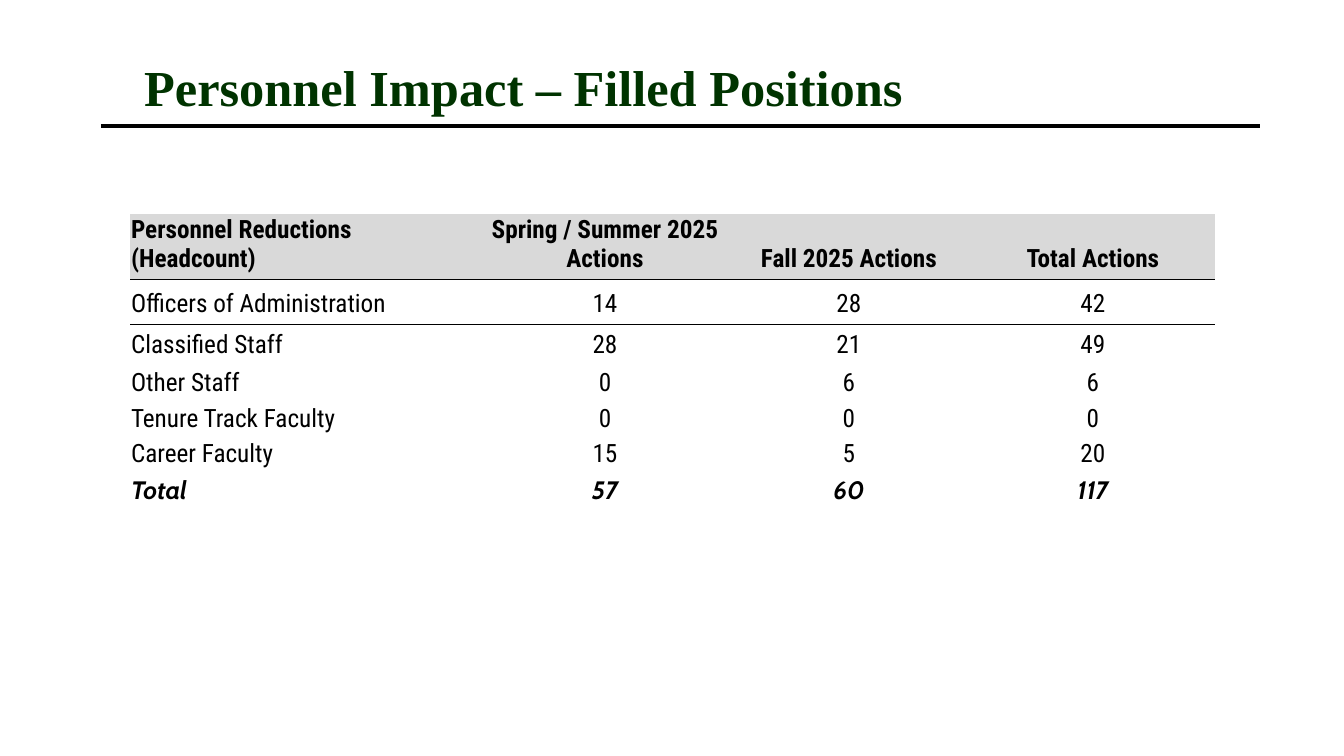
from dataclasses import dataclass

from lxml import etree
from pptx import Presentation
from pptx.dml.color import RGBColor
from pptx.enum.shapes import MSO_CONNECTOR
from pptx.enum.text import MSO_ANCHOR, PP_ALIGN
from pptx.oxml import parse_xml
from pptx.oxml.ns import qn
from pptx.util import Inches, Pt

STRAIGHT = MSO_CONNECTOR.STRAIGHT
MIDDLE, BOTTOM = MSO_ANCHOR.MIDDLE, MSO_ANCHOR.BOTTOM
LEFT, CENTER = PP_ALIGN.LEFT, PP_ALIGN.CENTER
NO_STYLE_NO_GRID = "{2D5ABB26-0587-4C30-8999-92F81FD0307C}"


@dataclass(frozen=True)
class Theme:
    green: RGBColor = RGBColor(0x00, 0x33, 0x00)
    black: RGBColor = RGBColor(0x00, 0x00, 0x00)
    grey: RGBColor = RGBColor(0xD9, 0xD9, 0xD9)
    title_font: str = "Times New Roman"
    table_font: str = "Roboto Condensed"
    total_font: str = "Cabin"
    title_size: int = 36
    table_size: int = 18


THEME = Theme()
HEADINGS = ["Personnel Reductions (Headcount)", "Spring / Summer 2025 Actions",
            "Fall 2025 Actions", "Total Actions"]
HEADCOUNTS = [
    ["Officers of Administration", 14, 28, 42],
    ["Classified Staff", 28, 21, 49],
    ["Other Staff", 0, 6, 6],
    ["Tenure Track Faculty", 0, 0, 0],
    ["Career Faculty", 15, 5, 20],
    ["Total", 57, 60, 117],
]
COLUMN_WIDTHS = [3.5, 2.42, 2.42, 2.42]
ROW_HEIGHTS = [0.5, 0.45, 0.4, 0.38, 0.33, 0.25, 0.22]


def style_text(paragraph, font_name, size, color, bold, italic=False):
    for run in paragraph.runs:
        run.font.name = font_name
        run.font.size = Pt(size)
        run.font.color.rgb = color
        run.font.bold = bold
        run.font.italic = italic


def add_cell_border(cell, side):
    border = parse_xml(
        f'<a:{side} xmlns:a="http://schemas.openxmlformats.org/drawingml/2006/main" '
        f'w="{Pt(0.5)}"><a:solidFill><a:srgbClr val="{THEME.black}"/></a:solidFill></a:{side}>')
    cell._tc.get_or_add_tcPr().insert(0, border)


presentation = Presentation()
presentation.slide_width = Inches(13.33)
presentation.slide_height = Inches(7.5)
slide = presentation.slides.add_slide(presentation.slide_layouts[5])

# Title
title = slide.shapes.title
title.left, title.top = Inches(1.33), Inches(0.25)
title.width, title.height = Inches(9.42), Inches(1.22)
title.text_frame.text = "Personnel Impact – Filled Positions"
title.text_frame.vertical_anchor = MIDDLE
title_paragraph = title.text_frame.paragraphs[0]
title_paragraph.alignment = LEFT
style_text(title_paragraph, THEME.title_font, THEME.title_size, THEME.green, True)

# Rule under the title
rule = slide.shapes.add_connector(STRAIGHT, Inches(1), Inches(1.25), Inches(12.5), Inches(1.25))
rule.line.color.rgb = THEME.black
rule.line.width = Pt(2.25)
etree.SubElement(rule._element.spPr, qn("a:effectLst"))

# Headcount table
rows = [HEADINGS] + HEADCOUNTS
table = slide.shapes.add_table(
    len(rows), len(HEADINGS), Inches(1.29), Inches(2.12),
    Inches(sum(COLUMN_WIDTHS)), Inches(sum(ROW_HEIGHTS))).table
table.first_row = False
table.horz_banding = False
table._tbl.tblPr.find(qn("a:tableStyleId")).text = NO_STYLE_NO_GRID
for column, width in zip(table.columns, COLUMN_WIDTHS):
    column.width = Inches(width)
for row, height in zip(table.rows, ROW_HEIGHTS):
    row.height = Inches(height)

for row_index, values in enumerate(rows):
    is_header = row_index == 0
    is_total = row_index == len(rows) - 1
    font_name = THEME.total_font if is_total else THEME.table_font
    for column_index, value in enumerate(values):
        cell = table.cell(row_index, column_index)
        cell.margin_left = cell.margin_right = cell.margin_top = Inches(0.01)
        cell.margin_bottom = Inches(0.05)
        cell.vertical_anchor = BOTTOM
        cell.text_frame.text = str(value)
        paragraph = cell.text_frame.paragraphs[0]
        paragraph.alignment = CENTER if column_index else LEFT
        style_text(paragraph, font_name, THEME.table_size, THEME.black,
                   is_header or is_total, is_total)
        if is_header:
            cell.fill.solid()
            cell.fill.fore_color.rgb = THEME.grey
            add_cell_border(cell, "lnB")
        else:
            cell.fill.background()
        if row_index == 1:
            add_cell_border(cell, "lnT")

presentation.save("out.pptx")
